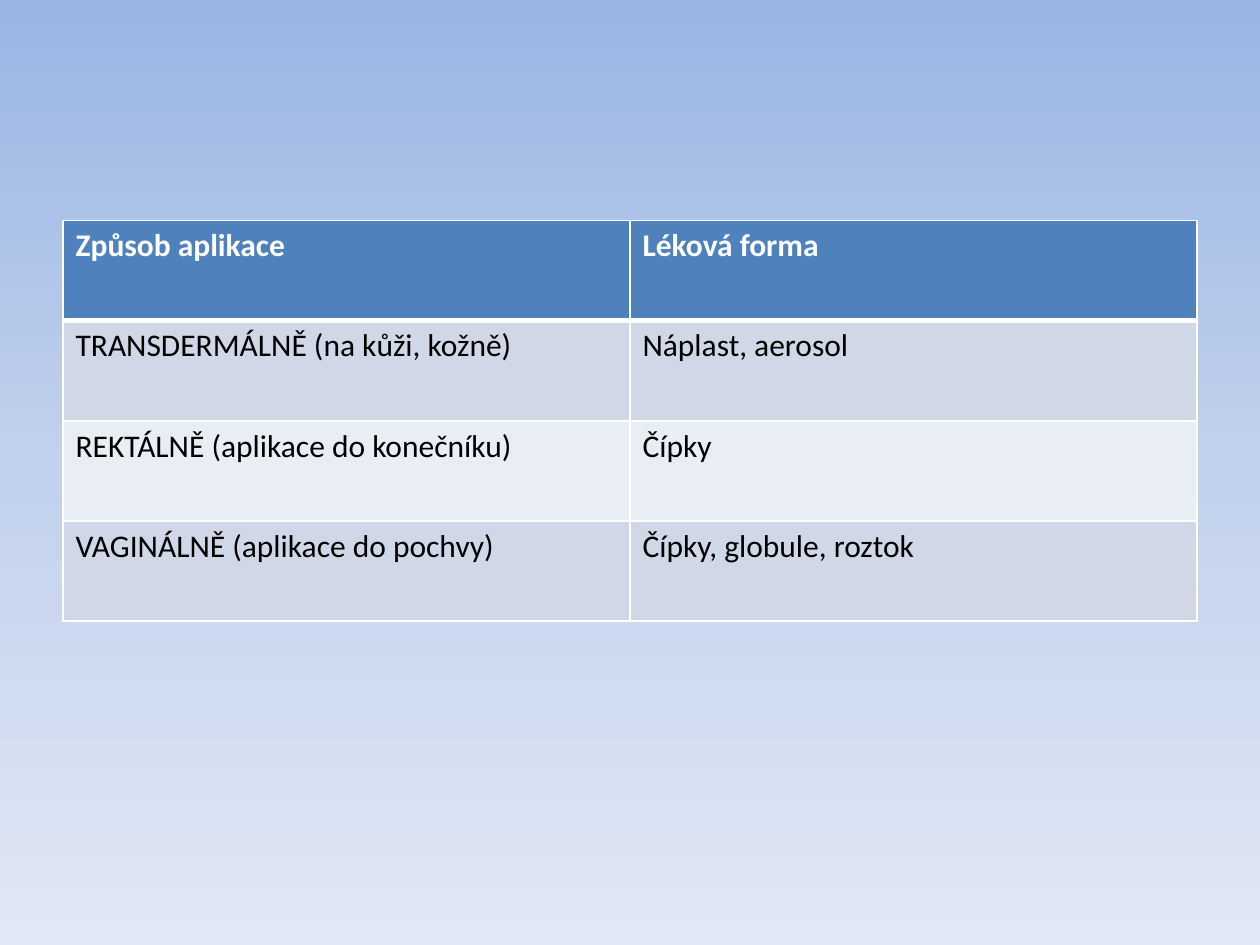
from copy import deepcopy
from dataclasses import dataclass

from lxml.etree import SubElement
from pptx import Presentation
from pptx.dml.color import RGBColor
from pptx.oxml.ns import qn
from pptx.util import Inches, Pt


@dataclass(frozen=True)
class Theme:
    font: str = "Calibri"
    size: int = 18
    header_text: str = "FFFFFF"
    body_text: str = "000000"
    header_fill: str = "4F81BD"
    bands: tuple = ("D0D8E8", "E9EDF4")
    border: str = "FFFFFF"
    thin: int = 1
    thick: int = 3
    sky: tuple = ((0, "9AB5E4"), (50, "C2D1ED"), (100, "E1E8F5"))


THEME = Theme()

ROWS = [
    ("Způsob aplikace", "Léková forma"),
    ("TRANSDERMÁLNĚ (na kůži, kožně)", "Náplast, aerosol"),
    ("REKTÁLNĚ (aplikace do konečníku)", "Čípky"),
    ("VAGINÁLNĚ (aplikace do pochvy)", "Čípky, globule, roztok"),
]


def set_background(s):
    """Fill the slide with the vertical theme gradient."""
    fill = s.background.fill
    fill.gradient()
    fill.gradient_angle = 270
    stops = s.element.find(".//" + qn("a:gsLst"))
    stops.append(deepcopy(stops[-1]))
    for gs, (percent, color) in zip(stops, THEME.sky):
        gs.set("pos", str(percent * 1000))
        for child in list(gs):
            gs.remove(child)
        SubElement(gs, qn("a:srgbClr"), val=color)


def write(tf, text, color, bold=False):
    r = tf.paragraphs[0].add_run()
    r.text = text
    r.font.name = THEME.font
    r.font.size = Pt(THEME.size)
    r.font.bold = bold
    r.font.color.rgb = RGBColor.from_string(color)


def set_borders(cell, top, bottom):
    """Draw all four cell edges; call before the cell fill is set."""
    tc_pr = cell._tc.get_or_add_tcPr()
    widths = {"L": THEME.thin, "R": THEME.thin, "T": top, "B": bottom}
    for side, width in widths.items():
        ln = SubElement(tc_pr, qn(f"a:ln{side}"), w=str(Pt(width)))
        SubElement(SubElement(ln, qn("a:solidFill")), qn("a:srgbClr"), val=THEME.border)


def format_cell(cell, text, row):
    header = row == 0
    set_borders(
        cell,
        top=THEME.thick if row == 1 else THEME.thin,
        bottom=THEME.thick if header else THEME.thin,
    )
    cell.fill.solid()
    color = THEME.header_fill if header else THEME.bands[(row - 1) % 2]
    cell.fill.fore_color.rgb = RGBColor.from_string(color)
    write(cell.text_frame, text,
          color=THEME.header_text if header else THEME.body_text, bold=header)


def add_forms_table(s):
    table = s.shapes.add_table(
        len(ROWS), len(ROWS[0]), Inches(0.5), Inches(1.75), Inches(9), Inches(3.18)
    ).table
    for row, texts in enumerate(ROWS):
        for col, text in enumerate(texts):
            format_cell(table.cell(row, col), text, row)


def main():
    prs = Presentation()
    prs.slide_width, prs.slide_height = Inches(10), Inches(7.5)
    s = prs.slides.add_slide(prs.slide_layouts[6])
    set_background(s)
    add_forms_table(s)
    prs.save("out.pptx")


if __name__ == "__main__":
    main()
